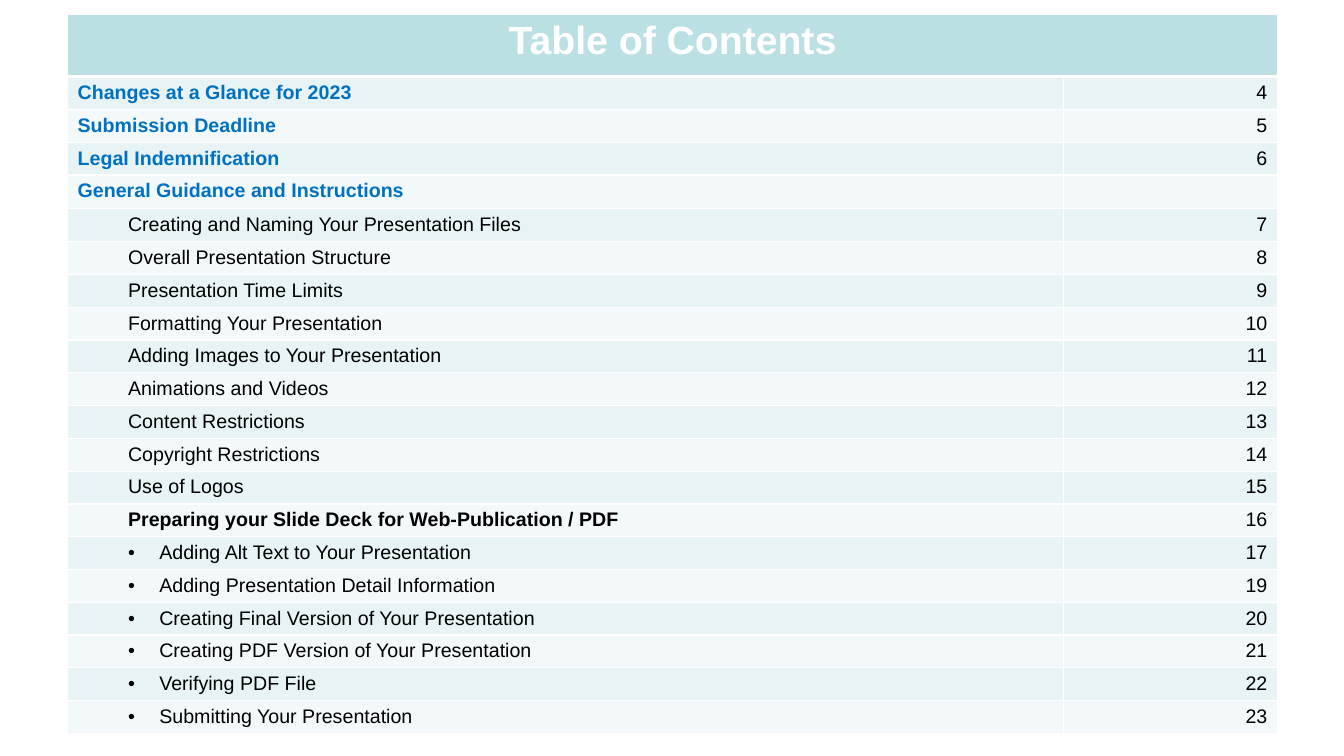
from lxml import etree
from pptx import Presentation
from pptx.dml.color import RGBColor
from pptx.enum.text import PP_ALIGN
from pptx.oxml.ns import qn
from pptx.util import Inches, Pt

LEFT, CENTER, RIGHT = PP_ALIGN.LEFT, PP_ALIGN.CENTER, PP_ALIGN.RIGHT

COLORS = {
    "header": "BBE0E3",
    "odd_row": "E7F3F4",
    "even_row": "F3F9FA",
    "white": "FFFFFF",
    "section": "0070C0",
    "black": "000000",
}

# Font, indent and bullet of each level of entry
LEVELS = {
    "section": {"color": "section", "bold": True},
    "topic": {"indent": 0.5},
    "heading": {"indent": 0.5, "bold": True},
    "step": {"indent": 0.81, "hanging": 0.31},
}

CONTENTS = [
    ("section", "Changes at a Glance for 2023", "4"),
    ("section", "Submission Deadline", "5"),
    ("section", "Legal Indemnification", "6"),
    ("section", "General Guidance and Instructions", ""),
    ("topic", "Creating and Naming Your Presentation Files", "7"),
    ("topic", "Overall Presentation Structure", "8"),
    ("topic", "Presentation Time Limits", "9"),
    ("topic", "Formatting Your Presentation", "10"),
    ("topic", "Adding Images to Your Presentation", "11"),
    ("topic", "Animations and Videos", "12"),
    ("topic", "Content Restrictions", "13"),
    ("topic", "Copyright Restrictions", "14"),
    ("topic", "Use of Logos", "15"),
    ("heading", "Preparing your Slide Deck for Web-Publication / PDF", "16"),
    ("step", "Adding Alt Text to Your Presentation", "17"),
    ("step", "Adding Presentation Detail Information", "19"),
    ("step", "Creating Final Version of Your Presentation", "20"),
    ("step", "Creating PDF Version of Your Presentation", "21"),
    ("step", "Verifying PDF File", "22"),
    ("step", "Submitting Your Presentation", "23"),
]


class ContentsSlide:
    """Holds the style and the slide being drawn."""

    font_name = "Arial"
    entry_size = 14
    title_size = 28

    def __init__(self, deck):
        self.slide = deck.slides.add_slide(deck.slide_layouts[6])

    def table(self, left, top, column_widths, title_height, entry_height, entry_count):
        width = sum(column_widths)
        height = title_height + entry_height * entry_count
        frame = self.slide.shapes.add_table(
            entry_count + 1, len(column_widths),
            Inches(left), Inches(top), Inches(width), Inches(height))
        table = frame.table
        for column, column_width in zip(table.columns, column_widths):
            column.width = Inches(column_width)
        for index, row in enumerate(table.rows):
            row.height = Inches(entry_height if index else title_height)
        return table

    def cell(self, cell, text, fill, align=LEFT, size=entry_size, color="black",
             bold=False, indent=0, hanging=0, bottom_border=1):
        cell.fill.solid()
        cell.fill.fore_color.rgb = RGBColor.from_string(COLORS[fill])
        self.borders(cell, bottom_border)
        paragraph = cell.text_frame.paragraphs[0]
        paragraph.alignment = align
        if indent:
            self.indent(paragraph, indent, hanging)
        if not text:
            # Keeps an empty cell from making its row taller
            etree.SubElement(paragraph._p, qn("a:endParaRPr"), sz=str(size * 100))
            return
        run = paragraph.add_run()
        run.text = text
        formats = {"name": self.font_name, "size": Pt(size), "bold": bold}
        for attribute, value in formats.items():
            setattr(run.font, attribute, value)
        run.font.color.rgb = RGBColor.from_string(COLORS[color])

    def borders(self, cell, bottom_width):
        properties = cell._tc.get_or_add_tcPr()
        widths = {"a:lnL": 1, "a:lnR": 1, "a:lnT": 1, "a:lnB": bottom_width}
        for position, (side, width) in enumerate(widths.items()):
            line = etree.Element(qn(side), w=str(Pt(width)))
            fill = etree.SubElement(line, qn("a:solidFill"))
            etree.SubElement(fill, qn("a:srgbClr"), val=COLORS["white"])
            properties.insert(position, line)

    def indent(self, paragraph, indent, hanging):
        """Indent a second-level entry, with a bullet if its indent hangs."""
        paragraph.level = 1
        properties = paragraph._p.get_or_add_pPr()
        properties.set("marL", str(Inches(indent)))
        properties.set("indent", str(-Inches(hanging)))
        if hanging:
            etree.SubElement(properties, qn("a:buFont"), typeface=self.font_name)
            etree.SubElement(properties, qn("a:buChar"), char="•")


def main():
    deck = Presentation()
    deck.slide_width, deck.slide_height = Inches(13.33), Inches(7.5)
    page = ContentsSlide(deck)

    title_height, table_height = 0.62, 7.13
    entry_height = (table_height - title_height) / len(CONTENTS)
    contents = page.table(0.67, 0.14, [9.88, 2.12], title_height, entry_height, len(CONTENTS))

    title = contents.cell(0, 0)
    title.merge(contents.cell(0, 1))
    page.cell(title, "Table of Contents", "header", CENTER, page.title_size,
              "white", bold=True, bottom_border=3)

    for row, (level, entry, page_number) in enumerate(CONTENTS, start=1):
        fill = "odd_row" if row % 2 else "even_row"
        page.cell(contents.cell(row, 0), entry, fill, **LEVELS[level])
        page.cell(contents.cell(row, 1), page_number, fill, RIGHT)

    deck.save("out.pptx")


if __name__ == "__main__":
    main()
